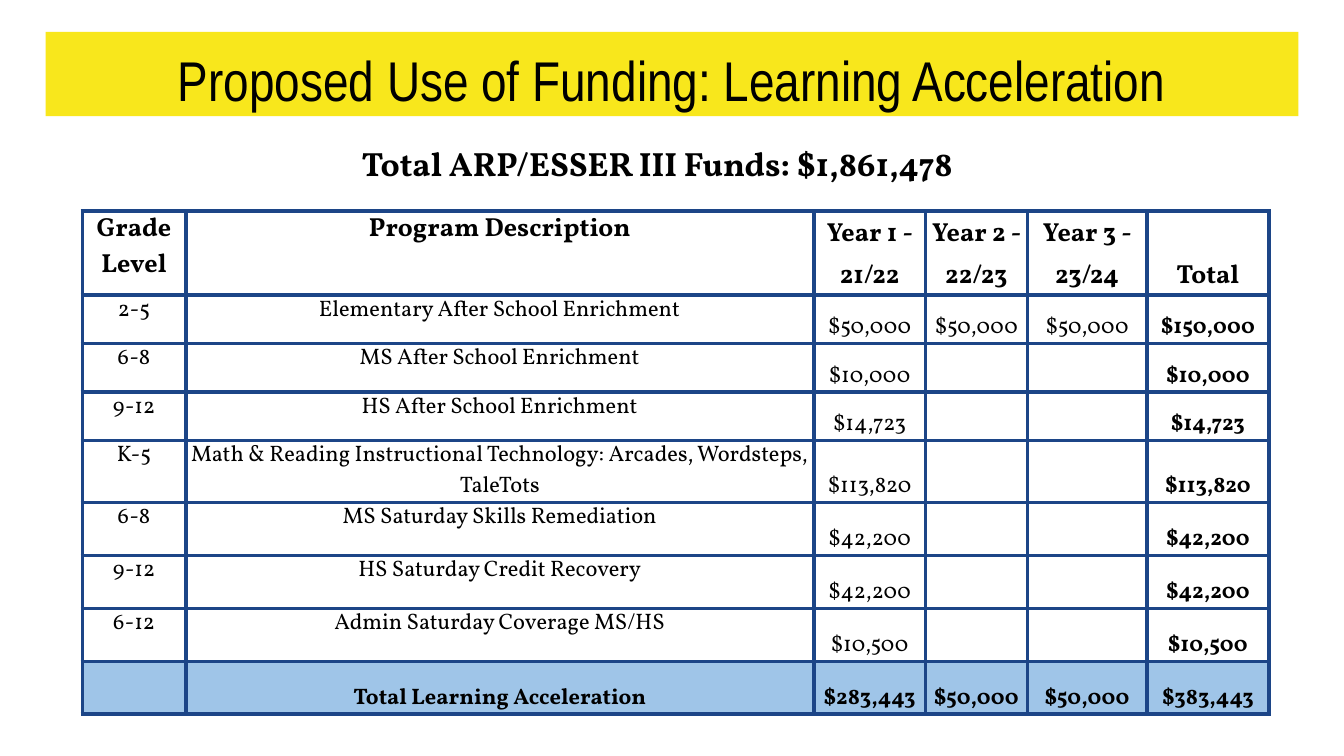
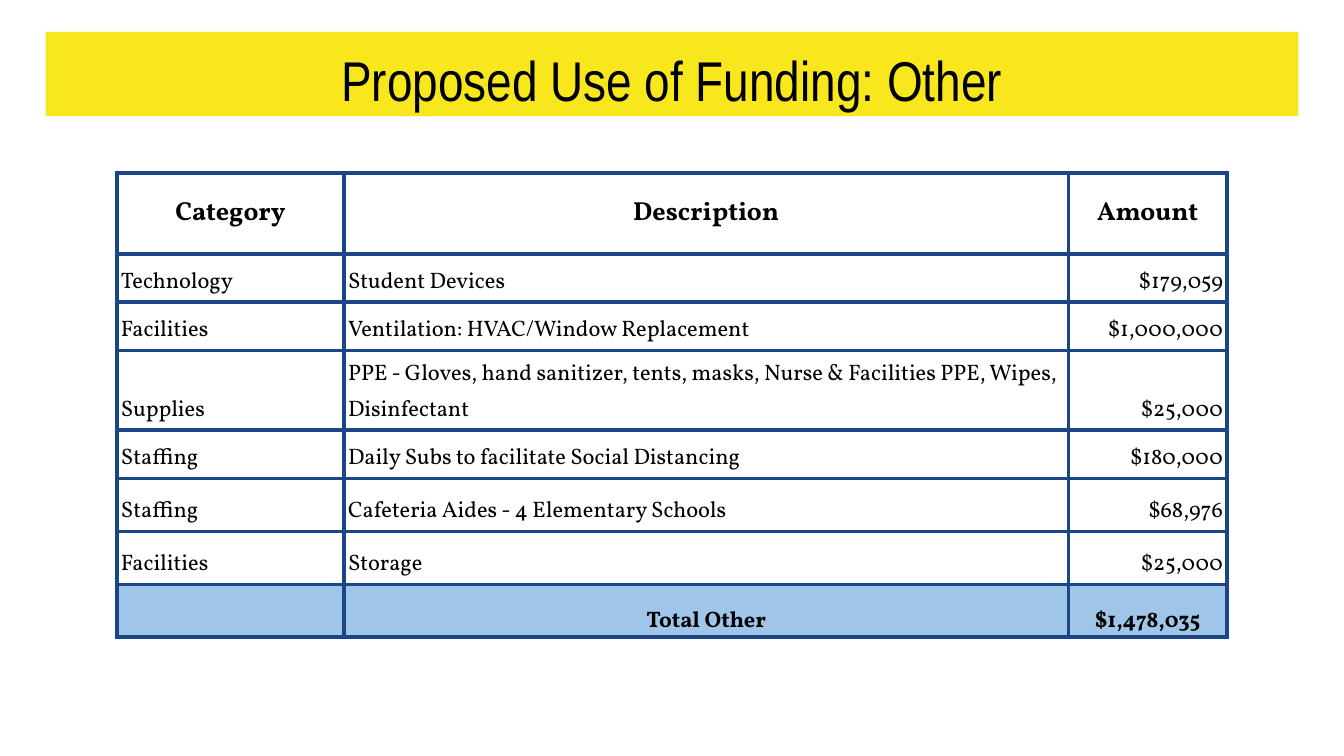
from dataclasses import dataclass

from lxml.etree import SubElement
from pptx import Presentation
from pptx.dml.color import RGBColor
from pptx.enum.text import MSO_ANCHOR, MSO_AUTO_SIZE, PP_ALIGN
from pptx.oxml.ns import qn
from pptx.util import Inches, Pt

SLIDE_W = Inches(10)
SLIDE_H = SLIDE_W * 9 // 16
COLORS = {"band": "F8E71C", "ink": "000000", "rule": "1C4587", "total": "9FC5E8"}
TITLE_FONT, BODY_FONT = "Arial Narrow", "Vollkorn"
RULE_WIDTH = Pt(2.25)
TITLE_ONLY = 5

# Boxes are left, top, width, height in percent of the slide.
TITLE_BOX = (3.4, 4.22, 93.2, 11.15)
SUBTITLE_BOX = (5.5, 17.1, 86.8, 8.9)
ACCELERATION_BOX = (6.13, 27.95, 88.3, 64.9)
OTHER_BOX = (8.7, 22.92, 82.6, 57.28)

# Column and row sizes are weights within the table's box.
ACCELERATION_COLUMNS = (77, 468, 83, 76, 89, 91)
ACCELERATION_ROWS = (60, *[36] * 3, *[39.4] * 5)
OTHER_COLUMNS = (169, 539, 118)
OTHER_ROWS = (60, *[36] * 4, *[39.4] * 3)

ACCELERATION = [
    ("Grade Level", "Program Description", "Year 1 - 21/22", "Year 2 - 22/23",
     "Year 3 - 23/24", "Total"),
    ("2-5", "Elementary After School Enrichment", "$50,000", "$50,000", "$50,000",
     "$150,000"),
    ("6-8", "MS After School Enrichment", "$10,000", "", "", "$10,000"),
    ("9-12", "HS After School Enrichment", "$14,723", "", "", "$14,723"),
    ("K-5", "Math & Reading Instructional Technology: Arcades, Wordsteps, TaleTots",
     "$113,820", "", "", "$113,820"),
    ("6-8", "MS Saturday Skills Remediation", "$42,200", "", "", "$42,200"),
    ("9-12", "HS Saturday Credit Recovery", "$42,200", "", "", "$42,200"),
    ("6-12", "Admin Saturday Coverage MS/HS", "$10,500", "", "", "$10,500"),
    ("", "Total Learning Acceleration", "$283,443", "$50,000", "$50,000", "$383,443"),
]
OTHER = [
    ("Category", "Description", "Amount"),
    ("Technology", "Student Devices", "$179,059"),
    ("Facilities", "Ventilation: HVAC/Window Replacement", "$1,000,000"),
    ("Supplies", "PPE - Gloves, hand sanitizer, tents, masks, Nurse & Facilities PPE, "
     "Wipes, Disinfectant", "$25,000"),
    ("Staffing", "Daily Subs to facilitate Social Distancing", "$180,000"),
    ("Staffing", "Cafeteria Aides - 4 Elementary Schools", "$68,976"),
    ("Facilities", "Storage", "$25,000"),
    ("", "Total Other", "$1,478,035"),
]


@dataclass
class CellStyle:
    align: PP_ALIGN = PP_ALIGN.CENTER
    anchor: MSO_ANCHOR = MSO_ANCHOR.BOTTOM
    spacing: float = 1.15
    size: int = 12
    bold: bool = False
    margin: float = 0


def acceleration_style(row, col, last_row, last_col):
    style = CellStyle(size=14 if row == 0 else 12,
                      bold=row in (0, last_row) or col == last_col)
    if col < 2 and row < last_row:
        style.anchor, style.spacing = MSO_ANCHOR.TOP, 1
    return style


def other_style(row, col, last_row, last_col):
    if row == 0:
        return CellStyle(anchor=MSO_ANCHOR.MIDDLE, spacing=1, size=14, bold=True)
    if row == last_row:
        return CellStyle(bold=True)
    align = PP_ALIGN.RIGHT if col == last_col else PP_ALIGN.LEFT
    return CellStyle(align=align, margin=0.03)


def rgb(name):
    return RGBColor.from_string(COLORS[name])


def to_emu(box):
    left, top, width, height = box
    return (int(left * SLIDE_W / 100), int(top * SLIDE_H / 100),
            int(width * SLIDE_W / 100), int(height * SLIDE_H / 100))


def add_text(paragraph, text, font_name, size, bold=False):
    run = paragraph.add_run()
    run.text = text
    font = run.font
    font.name, font.size, font.bold = font_name, Pt(size), bold
    font.color.rgb = rgb("ink")
    return run


def add_highlight(run, color):
    properties = run._r.get_or_add_rPr()
    highlight = SubElement(properties, qn("a:highlight"))
    SubElement(highlight, qn("a:srgbClr"), val=COLORS[color])
    properties.find(qn("a:solidFill")).addnext(highlight)


def add_borders(cell):
    properties = cell._tc.get_or_add_tcPr()
    for side in ("lnL", "lnR", "lnT", "lnB"):
        line = SubElement(properties, qn(f"a:{side}"), w=str(RULE_WIDTH))
        fill = SubElement(line, qn("a:solidFill"))
        SubElement(fill, qn("a:srgbClr"), val=COLORS["rule"])


def fill_cell(cell, text, style, is_total):
    add_borders(cell)
    if is_total:
        cell.fill.solid()
        cell.fill.fore_color.rgb = rgb("total")
    else:
        cell.fill.background()
    cell.margin_left = cell.margin_right = Inches(style.margin)
    cell.margin_top = cell.margin_bottom = Inches(style.margin)
    cell.vertical_anchor = style.anchor
    if text:
        paragraph = cell.text_frame.paragraphs[0]
        paragraph.alignment, paragraph.line_spacing = style.align, style.spacing
        add_text(paragraph, text, BODY_FONT, style.size, style.bold)


def add_funding_table(slide, box, columns, rows, content, style_for):
    left, top, width, height = to_emu(box)
    table = slide.shapes.add_table(len(rows), len(columns), left, top, width, height).table
    table.horz_banding = False
    for column, weight in zip(table.columns, columns):
        column.width = int(width * weight / sum(columns))
    for row, weight in zip(table.rows, rows):
        row.height = int(height * weight / sum(rows))
    last_row, last_col = len(rows) - 1, len(columns) - 1
    for r, texts in enumerate(content):
        for c, text in enumerate(texts):
            style = style_for(r, c, last_row, last_col)
            fill_cell(table.cell(r, c), text, style, r == last_row)


def add_titled_slide(prs, text):
    slide = prs.slides.add_slide(prs.slide_layouts[TITLE_ONLY])
    title = slide.shapes.title
    title.left, title.top, title.width, title.height = to_emu(TITLE_BOX)
    title.fill.solid()
    title.fill.fore_color.rgb = rgb("band")
    frame = title.text_frame
    frame.auto_size = MSO_AUTO_SIZE.NONE
    frame.vertical_anchor = MSO_ANCHOR.TOP
    frame.margin_left = frame.margin_right = Inches(0.1)
    frame.margin_top = frame.margin_bottom = Inches(0.1)
    frame.paragraphs[0].alignment = PP_ALIGN.CENTER
    add_highlight(add_text(frame.paragraphs[0], text, TITLE_FONT, 30), "band")
    return slide


def add_subtitle(slide, text):
    frame = slide.shapes.add_textbox(*to_emu(SUBTITLE_BOX)).text_frame
    frame.word_wrap = True
    frame.auto_size = MSO_AUTO_SIZE.SHAPE_TO_FIT_TEXT
    frame.margin_top = frame.margin_bottom = Inches(0.1)
    frame.paragraphs[0].alignment = PP_ALIGN.CENTER
    add_text(frame.paragraphs[0], text, BODY_FONT, 18, bold=True)


def main():
    prs = Presentation()
    prs.slide_width, prs.slide_height = SLIDE_W, SLIDE_H

    acceleration = add_titled_slide(prs, "Proposed Use of Funding: Learning Acceleration")
    add_funding_table(acceleration, ACCELERATION_BOX, ACCELERATION_COLUMNS,
                      ACCELERATION_ROWS, ACCELERATION, acceleration_style)
    add_subtitle(acceleration, "Total ARP/ESSER III Funds: $1,861,478")

    other = add_titled_slide(prs, "Proposed Use of Funding: Other")
    add_funding_table(other, OTHER_BOX, OTHER_COLUMNS, OTHER_ROWS, OTHER, other_style)

    prs.save("out.pptx")


if __name__ == "__main__":
    main()
